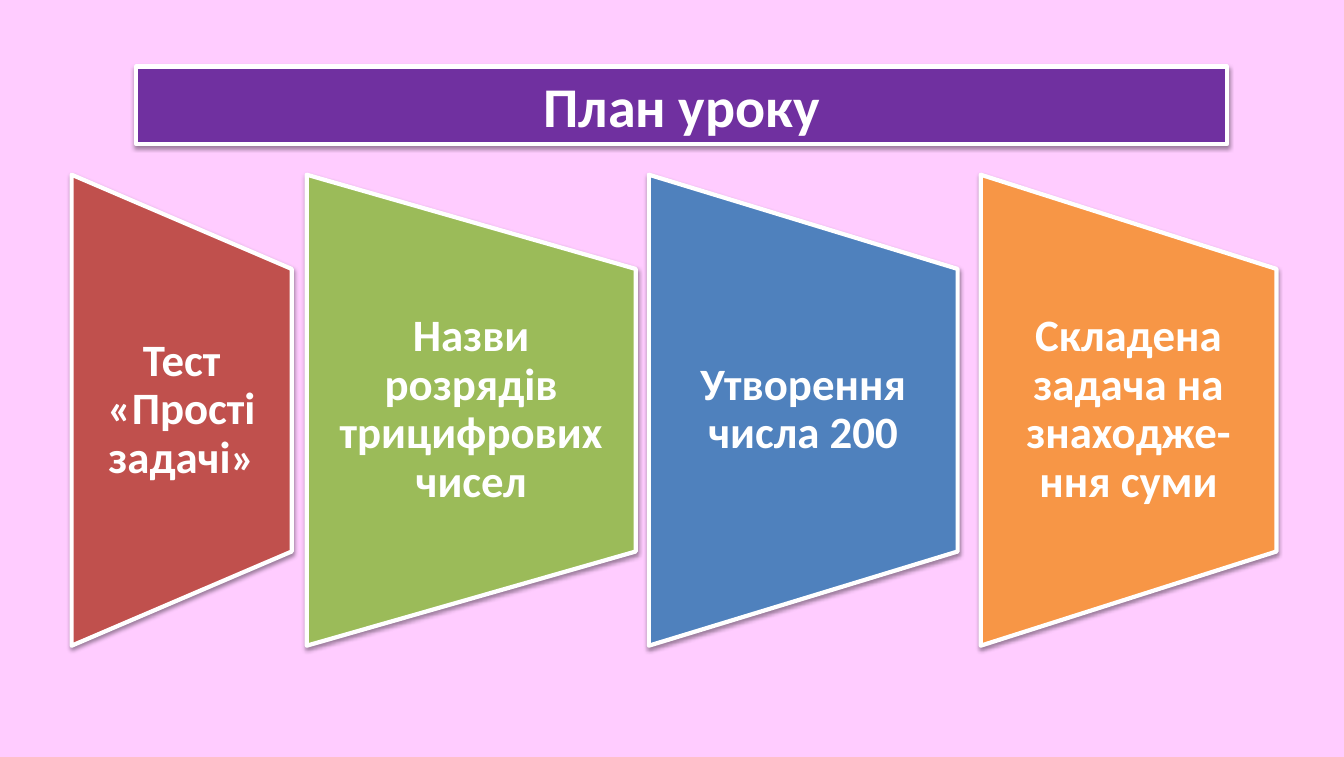
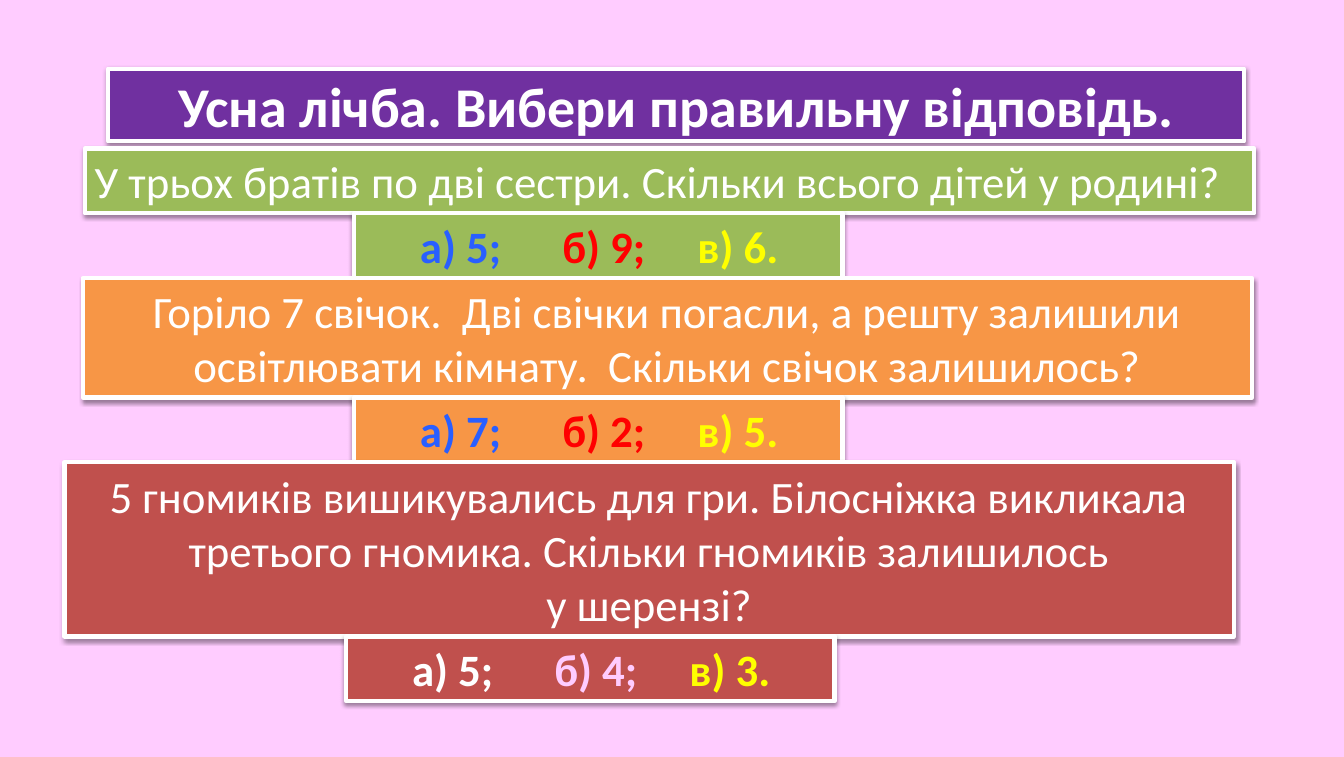
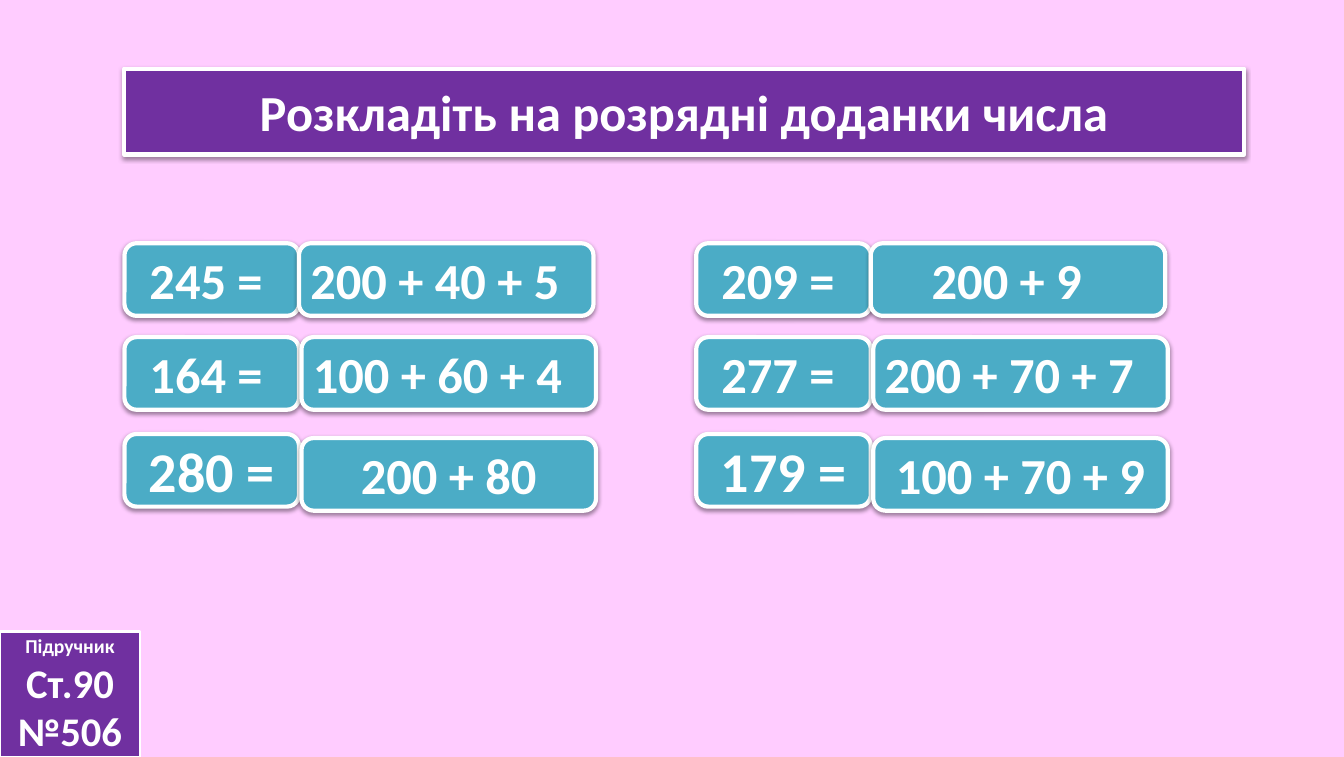
from dataclasses import dataclass

from lxml import etree
from pptx import Presentation
from pptx.dml.color import RGBColor
from pptx.enum.shapes import MSO_SHAPE as Shape
from pptx.enum.text import MSO_ANCHOR as Anchor, MSO_AUTO_SIZE as AutoSize, PP_ALIGN as Align
from pptx.oxml.ns import qn
from pptx.util import Pt


@dataclass(frozen=True)
class Theme:
    font: str = "Calibri"
    pink: str = "FFCCFF"
    white: str = "FFFFFF"
    purple: str = "7030A0"
    red: str = "C0504D"
    green: str = "9BBB59"
    blue: str = "4F81BD"
    orange: str = "F79646"
    teal: str = "4BACC6"
    bright_blue: str = "295FFF"
    bright_red: str = "FF0000"
    yellow: str = "FFFF00"
    title: int = 40
    number: int = 36
    body: int = 32
    page: int = 29
    small: int = 14
    border: int = 3


T = Theme()
SLIDE_W, SLIDE_H = 959, 540

# Slide 1: left, width, colour, label
PLAN_TITLE = ("План уроку", (97.2, 47.5, 778.3, 55.4), T.title)
PLAN_TOP, PLAN_H = 124.6, 336
PLAN = [
    (51.1, 157, T.red, "Тест «Прості задачі»"),
    (218.9, 234.7, T.green, "Назви розрядів трицифрових чисел"),
    (463, 220.3, T.blue, "Утворення числа 200"),
    (699.8, 211, T.orange, "Складена задача на знаходже-ння суми"),
]

# Slide 2: question left, answers left, lines, colour, alignment, question, answers, answer colours
QUIZ_TITLE = ("Усна лічба. Вибери правильну відповідь.", (77, 49, 810.7, 51.8), T.title)
QUIZ_TOP, QUESTION_W, ANSWERS_W = 106, 834.5, 348.5
LINE_H, PADDING = 39, 7.2
ANSWER_INDENT, ANSWER_TABS = 47, (101.5, 198)
QUIZ = [
    (60.5, 252.7, 1, T.green, Align.LEFT,
     "У трьох братів по дві сестри. Скільки всього дітей у родині?",
     ("а) 5;", "б) 9;", "в) 6."), (T.bright_blue, T.bright_red, T.yellow)),
    (59, 252.7, 2, T.orange, Align.CENTER,
     "Горіло 7 свічок.  Дві свічки погасли, а решту залишили "
     "освітлювати кімнату.  Скільки свічок залишилось?",
     ("а) 7;", "б) 2;", "в) 5."), (T.bright_blue, T.bright_red, T.yellow)),
    (46, 247, 3, T.red, Align.CENTER,
     "5 гномиків вишикувались для гри. Білосніжка викликала "
     "третього гномика. Скільки гномиків залишилось\nу шерензі?",
     ("а) 5;", "б) 4;", "в) 3."), (T.white, T.pink, T.yellow)),
]

# Slide 3: number top, sum top, sum offset, number size, right insets, equations
SUMS_TITLE = ("Розкладіть на розрядні доданки числа", (88.6, 49, 799.2, 61.2), T.number)
COLUMNS = (88.8, 496.8)
NUMBER_W, SUM_W, CELL_H = 124.6, 210.2, 51.8
SUMS = [
    (173.5, 173.5, 124.5, T.number, (8, 16),
     [("245 =", "200 + 40 + 5"), ("209 =", "200 + 9")]),
    (240.5, 240.5, 126.3, T.number, (8, 16),
     [("164 =", "100 + 60 + 4"), ("277 =", "200 + 70 + 7")]),
    (309.6, 312.5, 126.3, T.title, (0, 0),
     [("280 =", "200 + 80"), ("179 =", "100 + 70 + 9")]),
]
BOOK = [("Підручник", T.small), ("Ст.90 №506", T.page)]
BOOK_W, BOOK_H = 100, 89.3


def rgb(value):
    return RGBColor.from_string(value)


def add_text(p, text, size, color=T.white, bold=True):
    """Add text to a paragraph, with a line break at each newline."""
    for i, part in enumerate(text.split("\n")):
        if i:
            p.add_line_break()
        r = p.add_run()
        r.text = part
        r.font.name, r.font.size, r.font.bold = T.font, Pt(size), bold
        r.font.color.rgb = rgb(color)


def setup_frame(sp, insets=(7.2, 3.6, 7.2, 3.6), align=Align.CENTER):
    """Set up the text frame and return its first paragraph."""
    tf = sp.text_frame
    tf.word_wrap, tf.auto_size, tf.vertical_anchor = True, AutoSize.NONE, Anchor.MIDDLE
    tf.margin_left, tf.margin_top, tf.margin_right, tf.margin_bottom = map(Pt, insets)
    p = tf.paragraphs[0]
    p.alignment = align
    return p


def paint(sp, color, border=T.border, shadow=True):
    sp.fill.solid()
    sp.fill.fore_color.rgb = rgb(color)
    sp.line.color.rgb = rgb(T.white)
    sp.line.width = Pt(border)
    sp.shadow.inherit = False
    if shadow:
        effects = sp._element.spPr.find(qn("a:effectLst"))
        outer = etree.SubElement(effects, qn("a:outerShdw"), blurRad=str(Pt(3.1)),
                                 dist=str(Pt(1.6)), dir="5400000", rotWithShape="0")
        tint = etree.SubElement(outer, qn("a:srgbClr"), val="000000")
        etree.SubElement(tint, qn("a:alpha"), val="38000")


def add_box(s, kind, box, color, **style):
    sp = s.shapes.add_shape(kind, *map(Pt, box))
    paint(sp, color, **style)
    return sp


def add_slide(prs, title, box, size):
    s = prs.slides.add_slide(prs.slide_layouts[5])
    sp = s.shapes.title
    sp.left, sp.top, sp.width, sp.height = map(Pt, box)
    paint(sp, T.purple)
    add_text(setup_frame(sp), title, size)
    return s


def build_plan(prs):
    s = add_slide(prs, *PLAN_TITLE)
    middle = PLAN_TOP + PLAN_H / 2
    label_h = PLAN_H * 0.6
    for x, w, color, label in PLAN:
        # Turned a quarter, so its width runs down the slide
        box = (x + w / 2 - PLAN_H / 2, middle - w / 2, PLAN_H, w)
        add_box(s, Shape.FLOWCHART_MANUAL_OPERATION, box, color).rotation = 270
        tb = s.shapes.add_textbox(*map(Pt, (x, middle - label_h / 2, w, label_h)))
        p = setup_frame(tb, (16, 0, 16, 0))
        p.line_spacing = 0.9
        add_text(p, label, T.body)


def build_quiz(prs):
    s = add_slide(prs, *QUIZ_TITLE)
    y = QUIZ_TOP
    answers_h = LINE_H + PADDING
    for x, answers_x, lines, color, align, question, answers, colors in QUIZ:
        h = lines * LINE_H + PADDING
        sp = add_box(s, Shape.RECTANGLE, (x, y, QUESTION_W, h), color)
        add_text(setup_frame(sp, align=align), question, T.body, bold=False)
        y += h
        # Answers line up on tab stops
        sp = add_box(s, Shape.RECTANGLE, (answers_x, y, ANSWERS_W, answers_h), color)
        p = setup_frame(sp, (ANSWER_INDENT, 3.6, 7.2, 3.6), Align.LEFT)
        tabs = etree.SubElement(p._p.get_or_add_pPr(), qn("a:tabLst"))
        for pos in ANSWER_TABS:
            etree.SubElement(tabs, qn("a:tab"), pos=str(Pt(pos)), algn="l")
        for i, (answer, ink) in enumerate(zip(answers, colors)):
            add_text(p, "\t" + answer if i else answer, T.body, ink)
        y += answers_h


def build_sums(prs):
    s = add_slide(prs, *SUMS_TITLE)
    for number_y, sum_y, offset, size, insets, equations in SUMS:
        for x, (number, total) in zip(COLUMNS, equations):
            cells = [(number, x, number_y, NUMBER_W, size),
                     (total, x + offset, sum_y, SUM_W, T.number)]
            for (text, left, top, w, sz), inset in zip(cells, insets):
                sp = add_box(s, Shape.ROUNDED_RECTANGLE, (left, top, w, CELL_H), T.teal)
                add_text(setup_frame(sp, (0, 3.6, inset, 3.6)), text, sz)
    # Textbook reference in the corner
    sp = add_box(s, Shape.RECTANGLE, (0, SLIDE_H - BOOK_H, BOOK_W, BOOK_H), T.purple,
                 border=2, shadow=False)
    p = setup_frame(sp)
    for i, (text, size) in enumerate(BOOK):
        if i:
            p = sp.text_frame.add_paragraph()
            p.alignment = Align.CENTER
        add_text(p, text, size)


def main():
    prs = Presentation()
    prs.slide_width, prs.slide_height = Pt(SLIDE_W), Pt(SLIDE_H)
    fill = prs.slide_master.background.fill
    fill.solid()
    fill.fore_color.rgb = rgb(T.pink)
    for build in (build_plan, build_quiz, build_sums):
        build(prs)
    prs.save("out.pptx")


if __name__ == "__main__":
    main()
